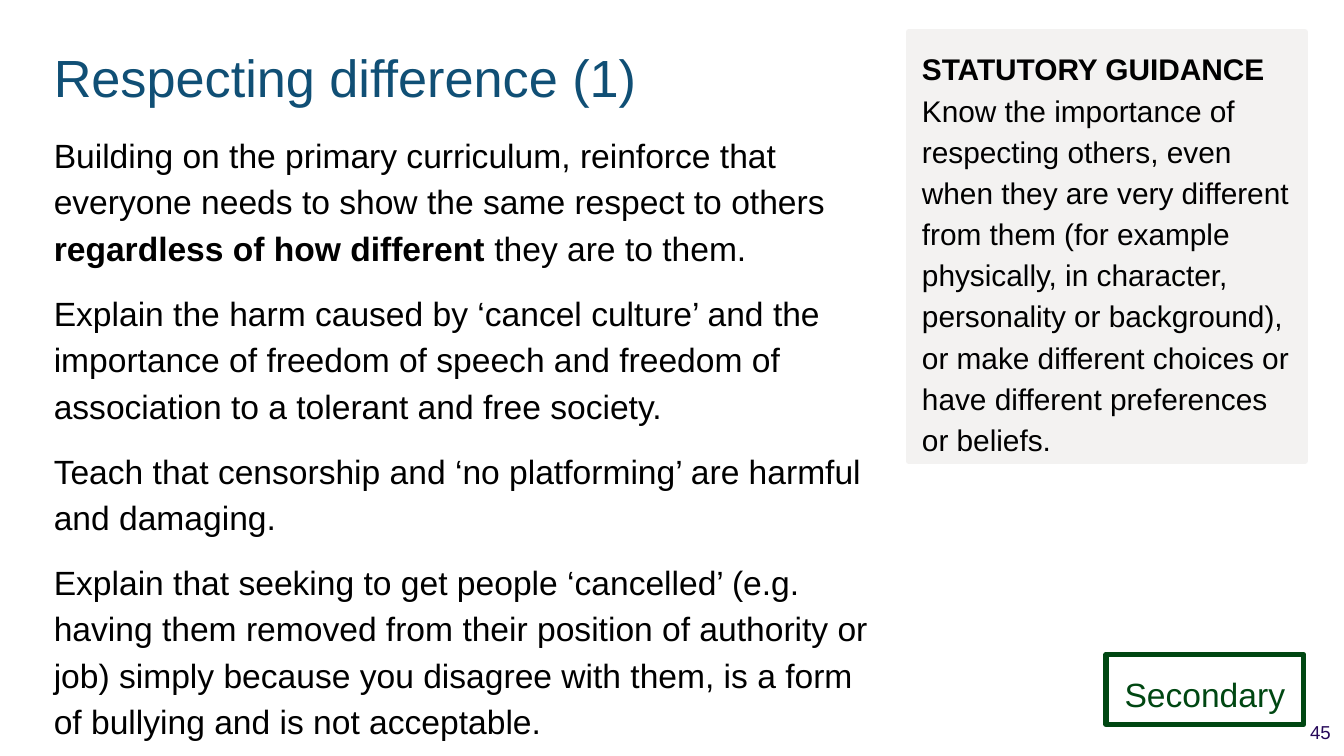
from lxml.etree import SubElement
from pptx import Presentation
from pptx.dml.color import RGBColor
from pptx.enum.shapes import MSO_SHAPE
from pptx.enum.text import MSO_ANCHOR, MSO_AUTO_SIZE, PP_ALIGN
from pptx.oxml.ns import qn
from pptx.util import Inches, Pt

BLACK = RGBColor(0x00, 0x00, 0x00)
BLUE = RGBColor(0x10, 0x4F, 0x75)
GREEN = RGBColor(0x00, 0x47, 0x12)
GREY = RGBColor(0xF3, 0xF2, 0xF1)
PURPLE = RGBColor(0x26, 0x08, 0x59)

POINTS = [
    [("Building on the primary curriculum, reinforce that everyone needs to "
      "show the same respect to others ", False),
     ("regardless of how different", True),
     (" they are to them.", False)],
    [("Explain the harm caused by ‘cancel culture’ and the importance of "
      "freedom of speech and freedom of association to a tolerant and free "
      "society.", False)],
    [("Teach that censorship and ‘no platforming’ are harmful and damaging.",
      False)],
    [("Explain that seeking to get people ‘cancelled’ (e.g. having them "
      "removed from their position of authority or job) simply because you "
      "disagree with them, is a form of bullying and is not acceptable.",
      False)],
]
GUIDANCE = [[
    ("STATUTORY GUIDANCE\n", True),
    ("Know the importance of respecting others, even when they are very "
     "different from them (for example physically, in character, personality "
     "or background), or make different choices or have different "
     "preferences or beliefs.", False),
]]


def place(shape, left, top, width, height):
    box = {"left": left, "top": top, "width": width, "height": height}
    for name, value in box.items():
        setattr(shape, name, Inches(value))


def outline(shape, color):
    """Give a shape a thick line with round corners."""
    shape.line.color.rgb = color
    shape.line.width = Pt(3)
    line = shape.element.spPr.find(qn("a:ln"))
    SubElement(line, qn("a:round"))


def add_run(para, text, size, color, bold):
    """Add a run; a closing newline becomes a line break."""
    run = para.add_run()
    run.text = text.rstrip("\n")
    style = {"name": "Arial", "size": Pt(size), "bold": bold}
    for name, value in style.items():
        setattr(run.font, name, value)
    run.font.color.rgb = color
    if text.endswith("\n"):
        para.add_line_break()


def write(shape, paras, size, color, align=PP_ALIGN.LEFT, spacing=1.15,
          anchor=MSO_ANCHOR.TOP):
    """Fill a shape with unbulleted paragraphs of (text, bold) runs."""
    frame = shape.text_frame
    style = {"word_wrap": True, "auto_size": MSO_AUTO_SIZE.NONE,
             "vertical_anchor": anchor}
    style.update({f"margin_{side}": Inches(0.1)
                  for side in ("left", "top", "right", "bottom")})
    for name, value in style.items():
        setattr(frame, name, value)
    for i, runs in enumerate(paras):
        para = frame.add_paragraph() if i else frame.paragraphs[0]
        form = {"alignment": align, "line_spacing": spacing,
                "space_before": Pt(10 if i else 0), "space_after": Pt(0)}
        for name, value in form.items():
            setattr(para, name, value)
        props = para._p.get_or_add_pPr()
        props.set("marL", "0")
        props.set("indent", "0")
        SubElement(props, qn("a:buNone"))
        for text, bold in runs:
            add_run(para, text, size, color, bold)


def add_tag(slide, text):
    tag = slide.shapes.add_shape(MSO_SHAPE.RECTANGLE, 0, 0, 0, 0)
    place(tag, 8.23, 4.87, 1.47, 0.52)
    tag.shadow.inherit = False
    tag.fill.background()
    outline(tag, GREEN)
    write(tag, [[(text, False)]], 18, GREEN, PP_ALIGN.CENTER)


def add_number(slide, text):
    box = slide.shapes.add_textbox(0, 0, 0, 0)
    place(box, 9.61, 5.26, 0.39, 0.37)
    write(box, [[(text, False)]], 10, PURPLE, PP_ALIGN.RIGHT, 1.0,
          MSO_ANCHOR.MIDDLE)


def main():
    deck = Presentation()
    deck.slide_width = Inches(10)
    deck.slide_height = deck.slide_width * 9 // 16
    slide = deck.slides.add_slide(deck.slide_layouts[3])
    title, body, side = slide.placeholders

    place(title, 0.3, 0.24, 6.41, 0.63)
    write(title, [[("Respecting difference (1)", False)]], 28, BLUE,
          spacing=1.0)
    place(body, 0.3, 0.86, 6.41, 4.01)
    write(body, POINTS, 18, BLACK)
    place(side, 6.76, 0.24, 2.95, 3.19)
    side.fill.solid()
    side.fill.fore_color.rgb = GREY
    outline(side, GREY)
    write(side, GUIDANCE, 16, BLACK)
    add_tag(slide, "Secondary")
    add_number(slide, "45")
    deck.save("out.pptx")


if __name__ == "__main__":
    main()
